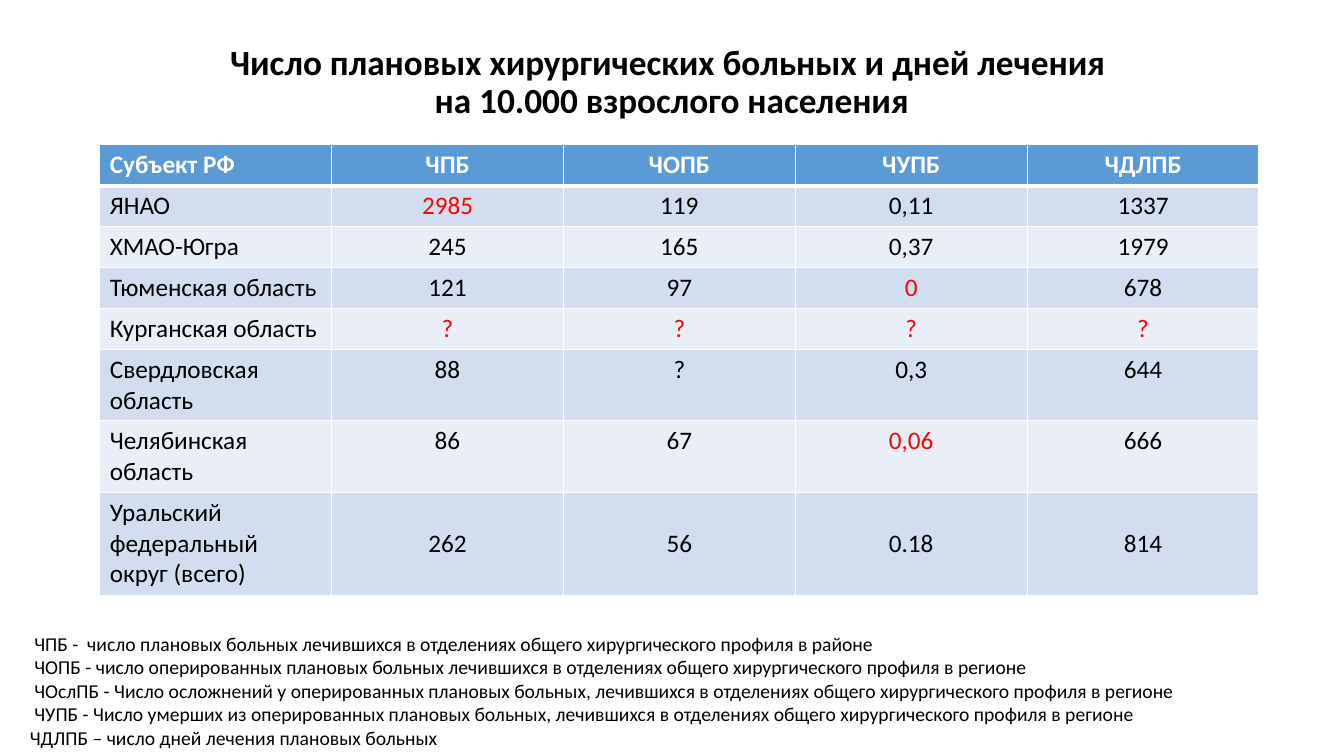
import dataclasses

import lxml.etree
import pptx
import pptx.dml.color
import pptx.enum.text
import pptx.oxml.ns
import pptx.util

PX = 9525
ALIGN = pptx.enum.text.PP_ALIGN
ANCHOR = pptx.enum.text.MSO_ANCHOR


@dataclasses.dataclass(frozen=True)
class Theme:
    """Colours, font and type sizes of the slide."""
    font: str = "Calibri"
    ink: str = "000000"
    light: str = "FFFFFF"
    alert: str = "FF0000"
    header: str = "5B9BD5"
    bands: tuple = ("D2DEEF", "EAEFF7")
    title_size: float = 25.2
    table_size: float = 18
    legend_size: float = 14
    thin: int = 1
    thick: int = 3


THEME = Theme()

TITLE = "Число плановых хирургических больных и дней лечения \vна 10.000 взрослого населения"
HEADER = ("Субъект РФ", "ЧПБ", "ЧОПБ", "ЧУПБ", "ЧДЛПБ")
REGIONS = (
    ("ЯНАО", "2985", "119", "0,11", "1337"),
    ("ХМАО-Югра", "245", "165", "0,37", "1979"),
    ("Тюменская область", "121", "97", "0", "678"),
    ("Курганская область", "?", "?", "?", "?"),
    ("Свердловская область", "88", "?", "0,3", "644"),
    ("Челябинская область", "86", "67", "0,06", "666"),
    ("Уральский федеральный округ (всего)", "262", "56", "0.18", "814"),
)
ALERTS = {(1, 1), (3, 3), (4, 1), (4, 2), (4, 3), (4, 4), (6, 3)}
ROW_HEIGHTS = (39, 39, 39, 39, 39, 68, 68, 98)
LEGEND = (
    " ЧПБ -  число плановых больных лечившихся в отделениях общего хирургического профиля в районе",
    " ЧОПБ - число оперированных плановых больных лечившихся в отделениях общего хирургического профиля в регионе",
    " ЧОслПБ - Число осложнений у оперированных плановых больных, лечившихся в отделениях общего хирургического профиля в регионе",
    " ЧУПБ - Число умерших из оперированных плановых больных, лечившихся в отделениях общего хирургического профиля в регионе",
    "ЧДЛПБ – число дней лечения плановых больных",
)


def px(*lengths):
    """Turn pixel lengths into EMU."""
    return [pptx.util.Emu(length * PX) for length in lengths]


def rgb(colour):
    """Turn a hex string into a colour."""
    return pptx.dml.color.RGBColor.from_string(colour)


def write_text(frame, *lines, size, colour=THEME.ink, bold=False,
               align=ALIGN.LEFT, spacing=1.0):
    """Write each line as a formatted paragraph of the text frame."""
    frame.word_wrap = True
    for index, line in enumerate(lines):
        para = frame.add_paragraph() if index else frame.paragraphs[0]
        para.text = line
        para.alignment = align
        para.line_spacing = spacing
        for span in para.runs:
            span.font.name = THEME.font
            span.font.size = pptx.util.Pt(size)
            span.font.bold = bold
            span.font.color.rgb = rgb(colour)


def set_borders(cell, **widths):
    """Draw light borders of the given point widths, keyed by side L, R, T, B."""
    properties = cell._tc.get_or_add_tcPr()
    for index, side in enumerate("LRTB"):
        line = lxml.etree.Element(pptx.oxml.ns.qn(f"a:ln{side}"))
        line.set("w", str(pptx.util.Pt(widths.get(side, THEME.thin))))
        fill = lxml.etree.SubElement(line, pptx.oxml.ns.qn("a:solidFill"))
        lxml.etree.SubElement(fill, pptx.oxml.ns.qn("a:srgbClr"), val=THEME.light)
        properties.insert(index, line)


def add_title(page, left, top, width, height):
    """Place the centred slide title in its box."""
    box = page.shapes.add_textbox(*px(left, top, width, height))
    write_text(box.text_frame, TITLE, size=THEME.title_size, bold=True,
               align=ALIGN.CENTER, spacing=0.9)
    box.text_frame.vertical_anchor = ANCHOR.MIDDLE


def fill_cell(cell, text, row, column):
    """Format one table cell by its row and column."""
    is_header = row == 0
    colour = THEME.light if is_header else THEME.ink
    if (row, column) in ALERTS:
        colour = THEME.alert
    write_text(cell.text_frame, text, size=THEME.table_size, colour=colour,
               bold=is_header, align=ALIGN.CENTER if column else ALIGN.LEFT)
    is_total = row == len(REGIONS) and column > 0
    cell.vertical_anchor = ANCHOR.MIDDLE if is_total else ANCHOR.TOP
    cell.fill.solid()
    cell.fill.fore_color.rgb = rgb(THEME.header if is_header else THEME.bands[(row - 1) % 2])
    set_borders(cell, T=THEME.thick if row == 1 else THEME.thin,
                B=THEME.thick if is_header else THEME.thin)


def add_region_table(page, left, top, width):
    """Place the table of regions with equal columns."""
    rows = (HEADER, *REGIONS)
    frame = page.shapes.add_table(len(rows), len(HEADER),
                                  *px(left, top, width, sum(ROW_HEIGHTS)))
    table = frame.table
    for row, (texts, height) in enumerate(zip(rows, ROW_HEIGHTS)):
        table.rows[row].height = px(height)[0]
        for column, text in enumerate(texts):
            fill_cell(table.cell(row, column), text, row, column)


def add_legend(page, left, top, width, height):
    """Place the explanations of the abbreviations."""
    box = page.shapes.add_textbox(*px(left, top, width, height))
    write_text(box.text_frame, *LEGEND, size=THEME.legend_size)


def main():
    """Build the slide and save the deck."""
    deck = pptx.Presentation()
    deck.slide_width, deck.slide_height = px(1280, 720)
    page = deck.slides.add_slide(deck.slide_layouts[6])
    add_title(page, 88, 38, 1104, 83)
    add_region_table(page, 95, 138, 1104)
    add_legend(page, 19, 597, 1261, 123)
    deck.save("out.pptx")


if __name__ == "__main__":
    main()
